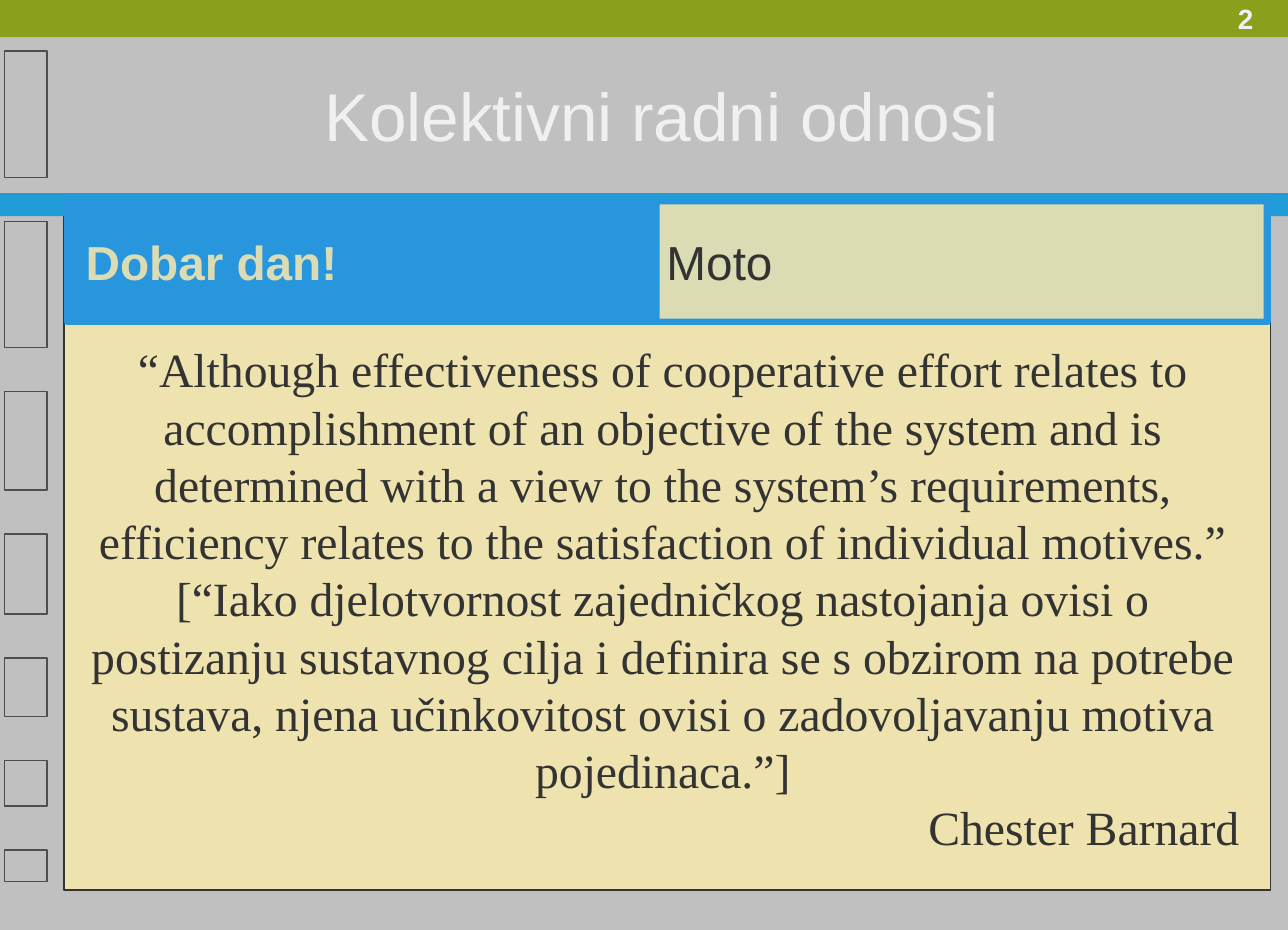
import pptx
import pptx.util
import pptx.dml.color
import pptx.enum.shapes
import pptx.enum.text

Cm, Pt = pptx.util.Cm, pptx.util.Pt
RGB = pptx.dml.color.RGBColor
ALIGN = pptx.enum.text.PP_ALIGN
ANCHOR = pptx.enum.text.MSO_ANCHOR
RECT = pptx.enum.shapes.MSO_SHAPE.RECTANGLE

GREY = RGB(0xC0, 0xC0, 0xC0)
CREAM = RGB(0xEE, 0xE3, 0xAE)
GREEN = RGB(0x8A, 0xA0, 0x1C)
BAND_BLUE = RGB(0x21, 0x9C, 0xD9)
BLUE = RGB(0x28, 0x96, 0xDC)
SAND = RGB(0xDC, 0xDC, 0xB4)
DARK = RGB(0x33, 0x33, 0x33)
OUTLINE = RGB(0x4D, 0x4D, 0x4D)
PALE = RGB(0xF0, 0xF0, 0xF0)

TITLE = "Kolektivni radni odnosi"
GREETING = "Dobar dan!"
TOPIC = "Moto"
PAGE = "2"
QUOTE = [
    ("“Although effectiveness of cooperative effort relates to accomplishment of an "
     "objective of the system and is determined with a view to the system’s requirements, "
     "efficiency relates to the satisfaction of individual motives.”", ALIGN.CENTER),
    ("[“Iako djelotvornost zajedničkog nastojanja ovisi o postizanju sustavnog cilja i "
     "definira se s obzirom na potrebe sustava, njena učinkovitost ovisi o zadovoljavanju "
     "motiva pojedinaca.”]", ALIGN.CENTER),
    ("Chester Barnard", ALIGN.RIGHT),
]

WIDTH, HEIGHT = 22.86, 16.51
SIDE_HEIGHTS = [2.24, 2.24, 1.75, 1.42, 1.04, 0.81, 0.56]
SIDE_LEFT, SIDE_TOP, SIDE_WIDTH, SIDE_GAP = 0.08, 0.91, 0.76, 0.78

prs = pptx.Presentation()
prs.slide_width, prs.slide_height = Cm(WIDTH), Cm(HEIGHT)
s = prs.slides.add_slide(prs.slide_layouts[6])
s.background.fill.solid()
s.background.fill.fore_color.rgb = GREY


def add_rect(box, fill=None, line=None, weight=0.75):
    sp = s.shapes.add_shape(RECT, *map(Cm, box))
    sp.shadow.inherit = False
    if fill is None:
        sp.fill.background()
    else:
        sp.fill.solid()
        sp.fill.fore_color.rgb = fill
    if line is None:
        sp.line.fill.background()
    else:
        sp.line.color.rgb = line
        sp.line.width = Pt(weight)
    return sp


def write(sp, paragraphs, size, color, font="Arial", bold=False, anchor=ANCHOR.MIDDLE,
          wrap=True, inset=(0.25, 0.13), spacing=None):
    tf = sp.text_frame
    tf.word_wrap = wrap
    tf.vertical_anchor = anchor
    tf.margin_left = tf.margin_right = Cm(inset[0])
    tf.margin_top = tf.margin_bottom = Cm(inset[1])
    for i, (text, align) in enumerate(paragraphs):
        p = tf.add_paragraph() if i else tf.paragraphs[0]
        p.text = text
        p.alignment = align
        p.line_spacing = spacing
        p.font.name, p.font.size, p.font.bold = font, Pt(size), bold
        p.font.color.rgb = color


def add_text(box):
    return s.shapes.add_textbox(*map(Cm, box))


add_rect((1.14, 3.71, 21.41, 12.09), CREAM, DARK)
add_rect((0, 0, WIDTH, 0.66), GREEN)
add_rect((0, 3.43, WIDTH, 0.41), BAND_BLUE)

top = SIDE_TOP
for height in SIDE_HEIGHTS:
    add_rect((SIDE_LEFT, top, SIDE_WIDTH, height), line=OUTLINE)
    top += height + SIDE_GAP

write(add_text((21.72, -0.1, 1.12, 0.84)), [(PAGE, ALIGN.LEFT)], 14, PALE,
      bold=True, anchor=ANCHOR.TOP, wrap=False)
write(add_text((1.14, 0.66, 21.21, 2.74)), [(TITLE, ALIGN.CENTER)], 34, PALE,
      inset=(0.23, 0.1))
write(add_rect((1.3, 5.92, 20.93, 9.73), CREAM), QUOTE, 24, DARK,
      font="Times New Roman", anchor=ANCHOR.TOP, inset=(0.23, 0.12), spacing=Pt(28.8))

add_rect((1.19, 3.58, 21.31, 2.13), BLUE, BLUE, 3)
write(add_rect((1.27, 3.58, 10.69, 2.13), BLUE, BLUE), [(GREETING, ALIGN.JUSTIFY)], 24,
      SAND, bold=True)
add_rect((11.71, 3.63, 10.72, 2.03), SAND)
write(add_text((11.58, 3.58, 10.69, 2.13)), [(TOPIC, ALIGN.JUSTIFY)], 24, DARK)

prs.save("out.pptx")
